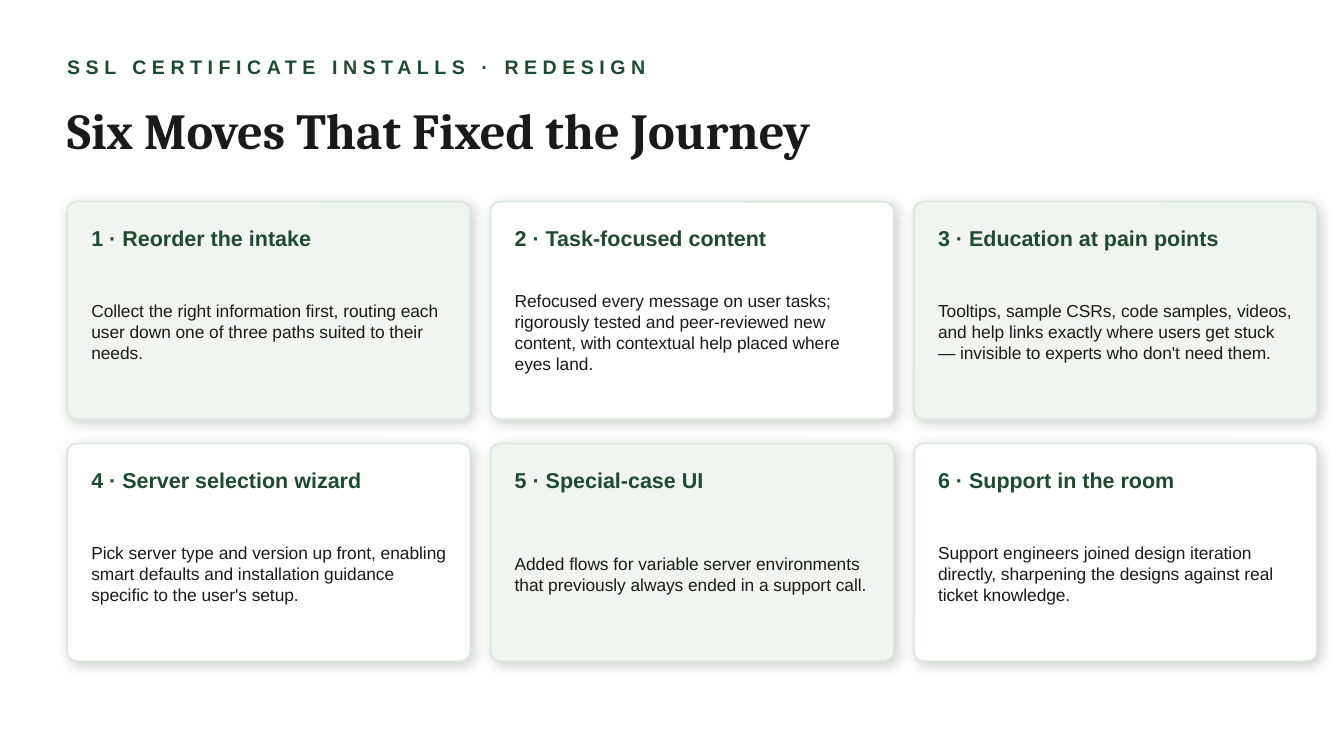
"""Build the slide of six redesign moves as a three-by-two grid of cards."""
from dataclasses import dataclass
from typing import Any

import lxml.etree
import pptx
import pptx.dml.color
import pptx.enum.shapes
import pptx.enum.text
import pptx.oxml.ns
import pptx.util


@dataclass(frozen=True)
class TextStyle:
    font: str
    size: float
    color: str
    bold: bool = False
    spacing: float = 0


@dataclass(frozen=True)
class Theme:
    eyebrow: TextStyle = TextStyle("Arial", 10.5, "1E4A32", True, 3)
    title: TextStyle = TextStyle("Cambria", 27, "1A1A1A", True)
    heading: TextStyle = TextStyle("Arial", 11.5, "1E4A32", True)
    detail: TextStyle = TextStyle("Arial", 9.3, "1A1A1A")
    card_fills: tuple[str, str] = ("F1F5F2", "FFFFFF")
    card_border: str = "DCE7E0"
    shadow: str = "000000"


@dataclass(frozen=True)
class Box:
    left: float
    top: float
    width: float
    height: float


@dataclass(frozen=True)
class Grid:
    left: float = 0.5
    top: float = 1.5
    columns: int = 3
    card_width: float = 3
    card_height: float = 1.62
    column_gap: float = 0.15
    row_gap: float = 0.18

    def cell(self, column: int, row: int) -> Box:
        return Box(
            self.left + column * (self.card_width + self.column_gap),
            self.top + row * (self.card_height + self.row_gap),
            self.card_width,
            self.card_height,
        )


@dataclass(frozen=True)
class Move:
    heading: str
    detail: str


THEME = Theme()
GRID = Grid()
SLIDE_WIDTH = 10
SLIDE_HEIGHT = SLIDE_WIDTH * 9 / 16
PADDING_X, PADDING_Y = 0.18, 0.12
HEADING_HEIGHT, HEADING_GAP = 0.3, 0.02

MOVES = [
    Move("Reorder the intake",
         "Collect the right information first, routing each user down one of "
         "three paths suited to their needs."),
    Move("Task-focused content",
         "Refocused every message on user tasks; rigorously tested and "
         "peer-reviewed new content, with contextual help placed where eyes land."),
    Move("Education at pain points",
         "Tooltips, sample CSRs, code samples, videos, and help links exactly "
         "where users get stuck — invisible to experts who don't need them."),
    Move("Server selection wizard",
         "Pick server type and version up front, enabling smart defaults and "
         "installation guidance specific to the user's setup."),
    Move("Special-case UI",
         "Added flows for variable server environments that previously always "
         "ended in a support call."),
    Move("Support in the room",
         "Support engineers joined design iteration directly, sharpening the "
         "designs against real ticket knowledge."),
]


def inches(box: Box) -> tuple[int, int, int, int]:
    left, top, width, height = (
        pptx.util.Inches(length)
        for length in (box.left, box.top, box.width, box.height)
    )
    return left, top, width, height


def rgb(color: str) -> pptx.dml.color.RGBColor:
    return pptx.dml.color.RGBColor.from_string(color)


def write(holder: Any, wording: str, style: TextStyle) -> None:
    frame = holder.text_frame
    frame.text = wording
    frame.word_wrap = True
    frame.auto_size = pptx.enum.text.MSO_AUTO_SIZE.NONE
    frame.vertical_anchor = pptx.enum.text.MSO_ANCHOR.MIDDLE
    frame.margin_left = frame.margin_right = 0
    frame.margin_top = frame.margin_bottom = 0
    paragraph = frame.paragraphs[0]
    paragraph.alignment = pptx.enum.text.PP_ALIGN.LEFT
    run = paragraph.runs[0]
    run.font.name = style.font
    run.font.size = pptx.util.Pt(style.size)
    run.font.bold = style.bold
    run.font.color.rgb = rgb(style.color)
    if style.spacing:
        run.font._element.set("spc", str(round(style.spacing * 100)))


def add_text(slide: Any, box: Box, wording: str, style: TextStyle) -> None:
    write(slide.shapes.add_textbox(*inches(box)), wording, style)


def cast_shadow(card: Any) -> None:
    card.shadow.inherit = False
    qn = pptx.oxml.ns.qn
    effects = card.element.spPr.find(qn("a:effectLst"))
    shadow = lxml.etree.SubElement(
        effects, qn("a:outerShdw"),
        blurRad=str(pptx.util.Pt(7)), dist=str(pptx.util.Pt(2)),
        dir=str(45 * 60000), algn="bl", rotWithShape="0",
    )
    tint = lxml.etree.SubElement(shadow, qn("a:srgbClr"), val=THEME.shadow)
    lxml.etree.SubElement(tint, qn("a:alpha"), val="18000")


def add_card(slide: Any, index: int, move: Move) -> None:
    row, column = divmod(index, GRID.columns)
    cell = GRID.cell(column, row)
    card = slide.shapes.add_shape(
        pptx.enum.shapes.MSO_SHAPE.ROUNDED_RECTANGLE, *inches(cell))
    card.adjustments[0] = 0.043
    card.fill.solid()
    card.fill.fore_color.rgb = rgb(THEME.card_fills[index % 2])
    card.line.color.rgb = rgb(THEME.card_border)
    card.line.width = pptx.util.Pt(1)
    cast_shadow(card)

    left, top = cell.left + PADDING_X, cell.top + PADDING_Y
    width = cell.width - 2 * PADDING_X
    detail_offset = HEADING_HEIGHT + HEADING_GAP
    detail_height = cell.height - 2 * PADDING_Y - detail_offset
    add_text(slide, Box(left, top, width, HEADING_HEIGHT),
             f"{index + 1} · {move.heading}", THEME.heading)
    add_text(slide, Box(left, top + detail_offset, width, detail_height),
             move.detail, THEME.detail)


def main() -> None:
    deck = pptx.Presentation()
    deck.slide_width = pptx.util.Inches(SLIDE_WIDTH)
    deck.slide_height = pptx.util.Inches(SLIDE_HEIGHT)
    slide = deck.slides.add_slide(deck.slide_layouts.get_by_name("Title Only"))

    title = slide.shapes.title
    title.left, title.top, title.width, title.height = inches(
        Box(GRID.left, 0.65, 9, 0.62))
    write(title, "Six Moves That Fixed the Journey", THEME.title)
    add_text(slide, Box(GRID.left, 0.35, 6, 0.3),
             "SSL CERTIFICATE INSTALLS · REDESIGN", THEME.eyebrow)

    for index, move in enumerate(MOVES):
        add_card(slide, index, move)
    deck.save("out.pptx")


if __name__ == "__main__":
    main()
